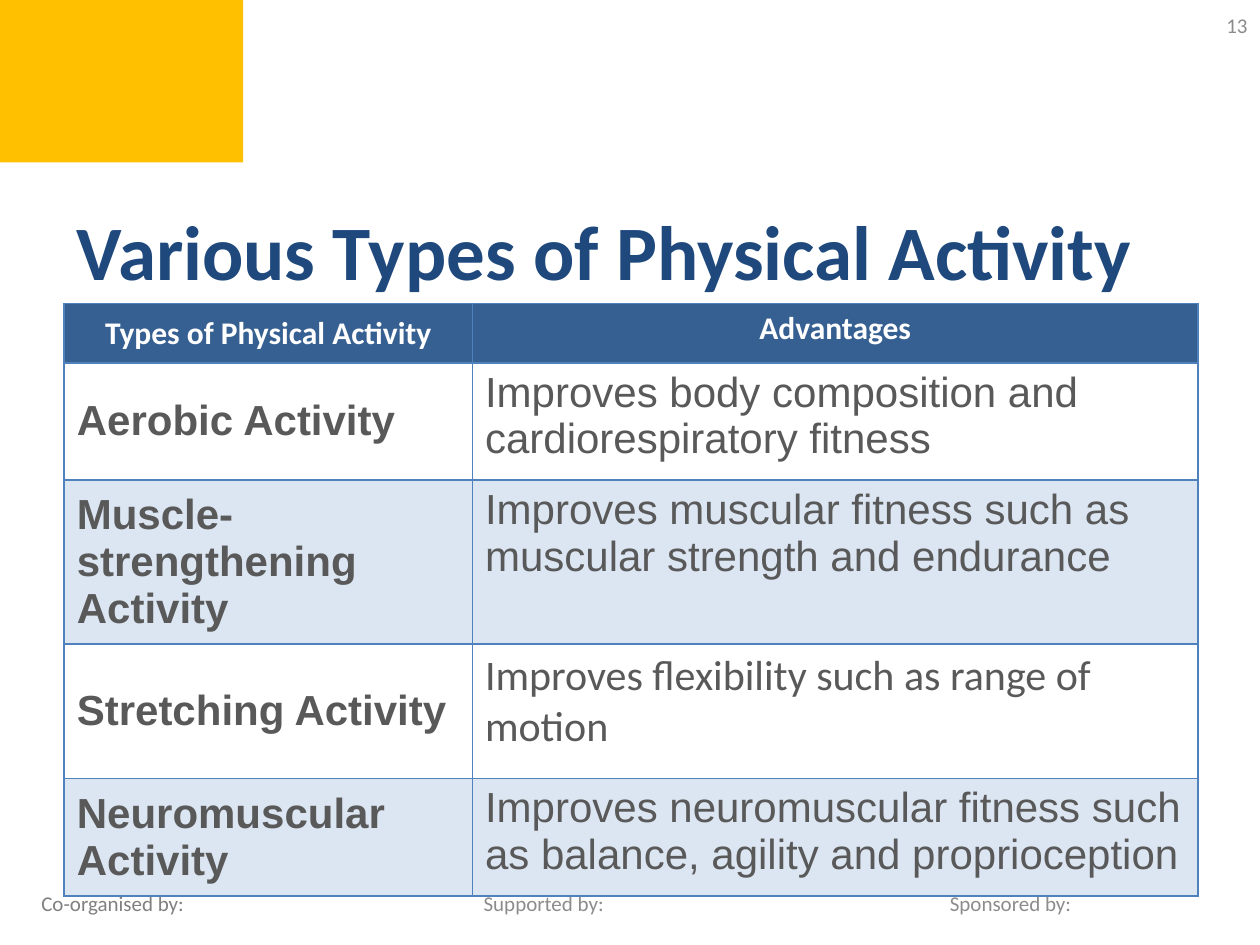
from lxml.etree import SubElement
from pptx import Presentation
from pptx.dml.color import RGBColor
from pptx.enum.shapes import MSO_SHAPE
from pptx.enum.text import MSO_ANCHOR, PP_ALIGN
from pptx.oxml.ns import qn
from pptx.util import Inches, Pt

NAVY, HEADER, BORDER, BAND = "1F497D", "376092", "4F81BD", "DCE6F2"
BODY, GREY, LIGHT_GREY = "595959", "808080", "8C8C8C"

HEADINGS = ("Types of Physical Activity", "Advantages")
ACTIVITIES = [
    ("Aerobic Activity",
     "Improves body composition and cardiorespiratory fitness", "Arial"),
    ("Muscle-strengthening Activity",
     "Improves muscular fitness such as muscular strength and endurance", "Arial"),
    ("Stretching Activity",
     "Improves flexibility such as range of motion", "Calibri"),
    ("Neuromuscular Activity",
     "Improves neuromuscular fitness such as balance, agility and proprioception",
     "Arial"),
]
COLUMN_WIDTHS = (3.24, 5.76)
ROW_HEIGHTS = (0.47, 0.93, 0.93, 1.07, 0.93)
CREDITS = [
    ("Co-organised by:", 0.23, 3.17, GREY),
    ("Supported by:", 3.74, 3.17, LIGHT_GREY),
    ("Sponsored by:", 7.44, 2.28, LIGHT_GREY),
]


def rgb(value):
    return RGBColor.from_string(value)


def write(tf, text, size=12, font="Calibri", color=LIGHT_GREY, bold=False,
          align=PP_ALIGN.LEFT):
    tf.word_wrap = True
    p = tf.paragraphs[0]
    p.alignment = align
    r = p.add_run()
    r.text = text
    r.font.size = Pt(size)
    r.font.name = font
    r.font.bold = bold
    r.font.color.rgb = rgb(color)


def add_title(s, text):
    sp = s.shapes.title
    sp.left, sp.top, sp.width, sp.height = map(Inches, (0.51, 1.47, 9, 1.02))
    sp.text_frame.vertical_anchor = MSO_ANCHOR.MIDDLE
    write(sp.text_frame, text, size=44, color=NAVY, bold=True)


def add_label(s, text, left, top, width, **style):
    sp = s.shapes.add_textbox(*map(Inches, (left, top, width, 0.4)))
    sp.text_frame.vertical_anchor = MSO_ANCHOR.MIDDLE
    write(sp.text_frame, text, **style)


def add_block(s, left, top, width, height, color):
    sp = s.shapes.add_shape(MSO_SHAPE.RECTANGLE,
                            *map(Inches, (left, top, width, height)))
    sp.shadow.inherit = False
    sp.fill.solid()
    sp.fill.fore_color.rgb = rgb(color)
    sp.line.fill.background()


def set_borders(cell, color):
    tc_pr = cell._tc.get_or_add_tcPr()
    for i, side in enumerate(("a:lnL", "a:lnR", "a:lnT", "a:lnB")):
        ln = SubElement(tc_pr, qn(side), w=str(Pt(1)))
        SubElement(SubElement(ln, qn("a:solidFill")), qn("a:srgbClr"), val=color)
        tc_pr.insert(i, ln)


def fill_cell(cell, text, fill, middle, **style):
    cell.vertical_anchor = MSO_ANCHOR.MIDDLE if middle else MSO_ANCHOR.TOP
    if fill:
        cell.fill.solid()
        cell.fill.fore_color.rgb = rgb(fill)
    else:
        cell.fill.background()
    set_borders(cell, BORDER)
    write(cell.text_frame, text, **style)


def add_activity_table(s):
    table = s.shapes.add_table(
        len(ROW_HEIGHTS), len(COLUMN_WIDTHS), Inches(0.51), Inches(2.41),
        Inches(sum(COLUMN_WIDTHS)), Inches(sum(ROW_HEIGHTS))).table
    for column, width in zip(table.columns, COLUMN_WIDTHS):
        column.width = Inches(width)
    for row, height in zip(table.rows, ROW_HEIGHTS):
        row.height = Inches(height)
    for col, heading in enumerate(HEADINGS):
        fill_cell(table.cell(0, col), heading, HEADER, col == 0, size=18,
                  color="FFFFFF", bold=True, align=PP_ALIGN.CENTER)
    for row, (activity, advantage, font) in enumerate(ACTIVITIES, 1):
        fill = BAND if row % 2 == 0 else None
        fill_cell(table.cell(row, 0), activity, fill, True, size=24,
                  font="Arial", color=BODY, bold=True)
        fill_cell(table.cell(row, 1), advantage, fill, False, size=24,
                  font=font, color=BODY)


def main():
    prs = Presentation()
    prs.slide_width, prs.slide_height = Inches(10), Inches(7.5)
    s = prs.slides.add_slide(prs.slide_layouts[5])
    add_block(s, 0, -0.02, 1.93, 1.31, "FFC000")
    for text, left, width, color in CREDITS:
        add_label(s, text, left, 6.97, width, color=color)
    add_title(s, "Various Types of Physical Activity")
    add_label(s, "13", 7.67, 0, 2.33, align=PP_ALIGN.RIGHT)
    add_activity_table(s)
    prs.save("out.pptx")


if __name__ == "__main__":
    main()
